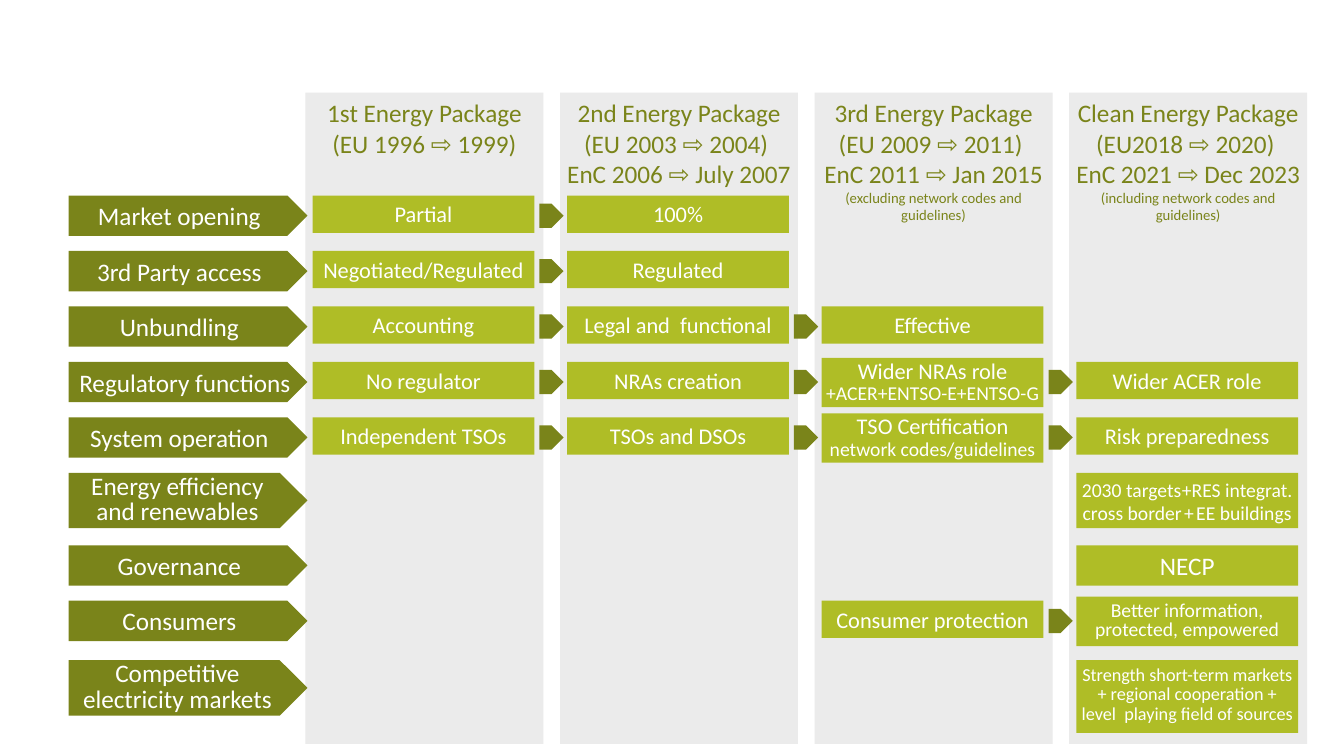
import pptx
import pptx.util
import pptx.dml.color
import pptx.enum.shapes
import pptx.enum.text
from dataclasses import dataclass

Inches = pptx.util.Inches
Pt = pptx.util.Pt
SHAPE = pptx.enum.shapes.MSO_SHAPE
ANCHOR = pptx.enum.text.MSO_ANCHOR
ALIGN = pptx.enum.text.PP_ALIGN


@dataclass(frozen=True)
class Theme:
    font: str = "Calibri"
    dark: str = "7A841A"
    lime: str = "AFBD26"
    pale: str = "EBEBEB"
    white: str = "FFFFFF"
    head: float = 18
    cell: float = 16
    small: float = 14
    dense: float = 13
    note: float = 10.5


THEME = Theme()

# Grid: left edges of the columns and tops of the rows
COLS = [3.03 + 2.525 * i for i in range(4)]
ROWS = [1.94 + 0.55 * i for i in range(6)] + [5.41, 5.96, 6.55]
TOP, WIDE, TALL = 0.92, 2.36, 6.46

# Column headings: parts of (text, size), side inset
HEADS = [
    ([("1st Energy Package (EU 1996 ⇨ 1999)", THEME.head)], 0.1),
    ([("2nd Energy Package (EU 2003 ⇨ 2004) \nEnC 2006 ⇨ July 2007", THEME.head)], 0),
    ([("3rd Energy Package (EU 2009 ⇨ 2011) \nEnC 2011 ⇨ Jan 2015 ", THEME.head),
      ("(excluding network codes and guidelines)", THEME.note)], 0),
    ([("Clean Energy Package (EU2018 ⇨ 2020) \nEnC 2021 ⇨ Dec 2023 ", THEME.head),
      ("(including network codes and guidelines)", THEME.note)], 0),
]

# Row labels
LABELS = ["Market opening", "3rd Party access", "Unbundling",
          "Regulatory functions", "System operation",
          "Energy efficiency and renewables", "Governance", "Consumers",
          "Competitive electricity markets"]
DOUBLE = (5, 8)  # rows with a label on two lines
LONG = 3         # row whose label needs a narrow right inset

# One-line cells, by column, with their first row
PLAIN = [
    (0, 0, ["Partial", "Negotiated/Regulated", "Accounting",
            "No regulator", "Independent TSOs"]),
    (1, 0, ["100%", "Regulated", "Legal and  functional",
            "NRAs creation", "TSOs and DSOs"]),
    (2, 2, ["Effective"]),
    (2, 7, ["Consumer protection"]),
    (3, 3, ["Wider ACER role", "Risk preparedness"]),
]

# Larger cells: column, row, shift, height, side inset, line pitch, parts
LARGE = [
    (2, 3, -0.04, 0.49, 0.04, 15, [("Wider NRAs role ", THEME.cell),
                                   ("+ACER+ENTSO-E+ENTSO-G", THEME.small)]),
    (2, 4, -0.04, 0.49, 0, 15, [("TSO Certification\n", THEME.cell),
                                ("network codes/guidelines", THEME.small)]),
    (3, 5, 0, 0.55, 0, None, [("2030 targets", THEME.small), (" ", 1),
                              ("+RES integrat. cross border", THEME.small),
                              (" ", 7), ("+", THEME.small), (" ", 7),
                              ("EE buildings", THEME.small)]),
    (3, 6, 0, 0.4, 0.1, None, [("NECP", THEME.head)]),
    (3, 7, -0.04, 0.49, 0.1, 14,
     [("Better information, protected, empowered", THEME.small)]),
    (3, 8, 0, 0.72, 0, 14,
     [("Strength short-term markets + regional cooperation +\n"
       "level  playing field of sources", THEME.dense)]),
]

# Arrows: the column they leave, and their rows
ARROWS = [(0, range(5)), (1, (2, 3, 4)), (2, (3, 4, 7))]


def color(code):
    return pptx.dml.color.RGBColor.from_string(code)


def block(slide, kind, x, y, w, h, fill):
    """Add a filled shape with no outline."""
    shape = slide.shapes.add_shape(
        kind, Inches(x), Inches(y), Inches(w), Inches(h))
    shape.shadow.inherit = False
    shape.fill.solid()
    shape.fill.fore_color.rgb = color(fill)
    shape.line.fill.background()
    return shape


def write(shape, parts, ink, left=0.1, right=0.1, pitch=None, anchor=ANCHOR.TOP):
    """Fill a shape with one centred paragraph made of sized parts."""
    frame = shape.text_frame
    frame.word_wrap = True
    frame.vertical_anchor = anchor
    frame.margin_left, frame.margin_right = Inches(left), Inches(right)
    frame.margin_top = frame.margin_bottom = Inches(0.05)
    para = frame.paragraphs[0]
    para.alignment = ALIGN.CENTER
    if pitch:
        para.line_spacing = Pt(pitch)
    base = parts[0][1]
    para.font.name = THEME.font
    para.font.size = Pt(base)
    para.font.color.rgb = color(ink)
    for text, size in parts:
        for i, line in enumerate(text.split("\n")):
            if i:
                para.add_line_break()
            if line:
                run = para.add_run()
                run.text = line
                if size != base:
                    run.font.size = Pt(size)


def column(slide, x, parts, inset):
    shape = block(slide, SHAPE.RECTANGLE, x, TOP, WIDE, TALL, THEME.pale)
    write(shape, parts, THEME.dark, inset, inset)


def cell(slide, col, y, h, parts, inset=0.1, pitch=None):
    shape = block(slide, SHAPE.RECTANGLE, COLS[col] + 0.07, y, 2.2, h, THEME.lime)
    write(shape, parts, THEME.white, inset, inset, pitch)


def label(slide, row, text):
    double = row in DOUBLE
    shape = block(slide, SHAPE.PENTAGON, 0.68, ROWS[row], 2.37,
                  0.55 if double else 0.4, THEME.dark)
    write(shape, [(text, THEME.head)], THEME.white,
          right=0.06 if row == LONG else 0.17,
          pitch=18 if double else None,
          anchor=ANCHOR.MIDDLE if double else ANCHOR.TOP)


def arrow(slide, col, row):
    block(slide, SHAPE.PENTAGON, COLS[col] + 2.32, ROWS[row] + 0.08,
          0.24, 0.24, THEME.dark)


def main():
    deck = pptx.Presentation()
    deck.slide_width, deck.slide_height = Inches(13.33), Inches(7.5)
    slide = deck.slides.add_slide(deck.slide_layouts[6])

    # Columns and labels
    for x, (parts, inset) in zip(COLS, HEADS):
        column(slide, x, parts, inset)
    for row, text in enumerate(LABELS):
        label(slide, row, text)

    # Cells
    for col, first, texts in PLAIN:
        for row, text in enumerate(texts, first):
            cell(slide, col, ROWS[row], 0.37, [(text, THEME.cell)])
    for col, row, shift, h, inset, pitch, parts in LARGE:
        cell(slide, col, ROWS[row] + shift, h, parts, inset, pitch)

    # Arrows between the columns
    for col, rows in ARROWS:
        for row in rows:
            arrow(slide, col, row)

    deck.save("out.pptx")


if __name__ == "__main__":
    main()
